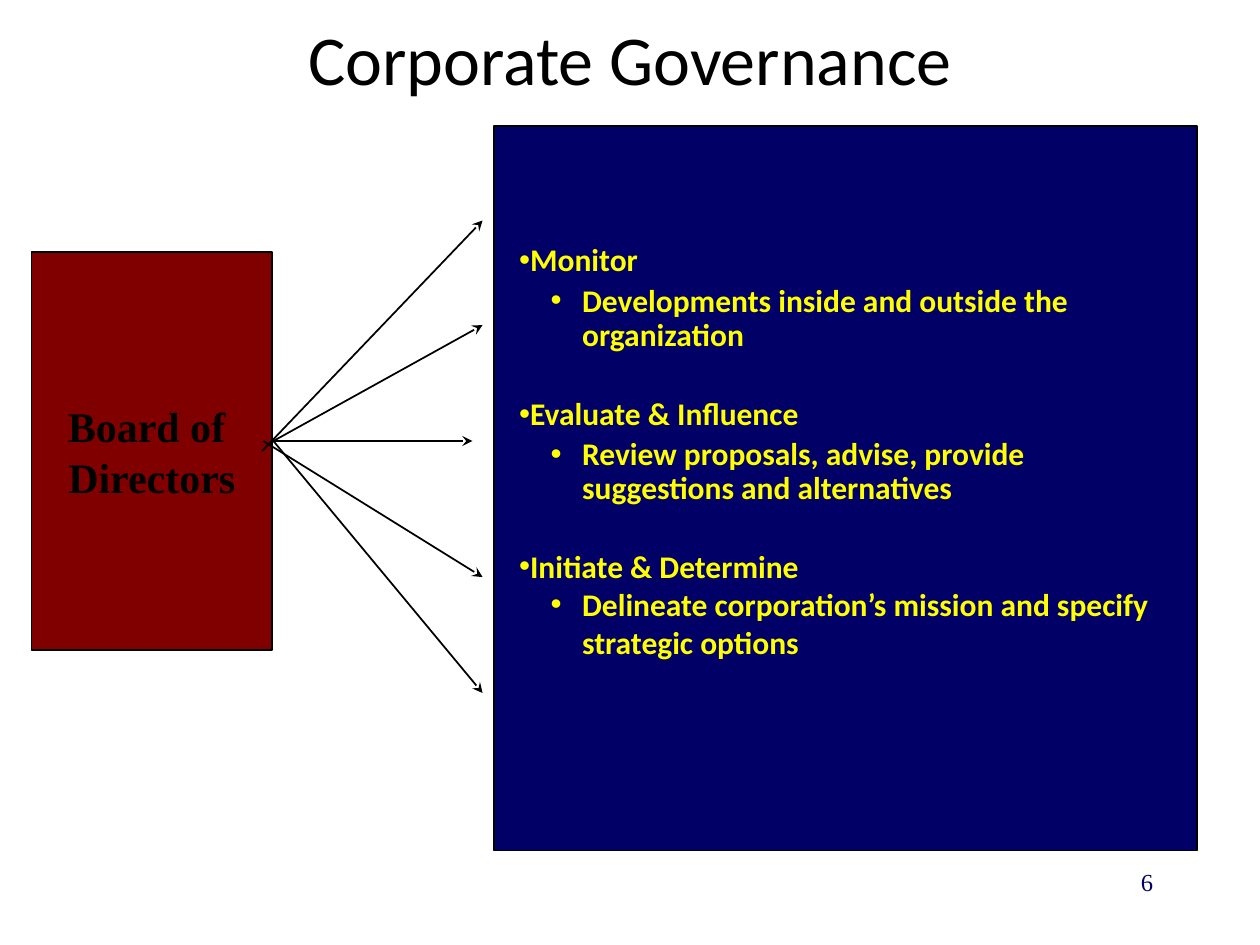
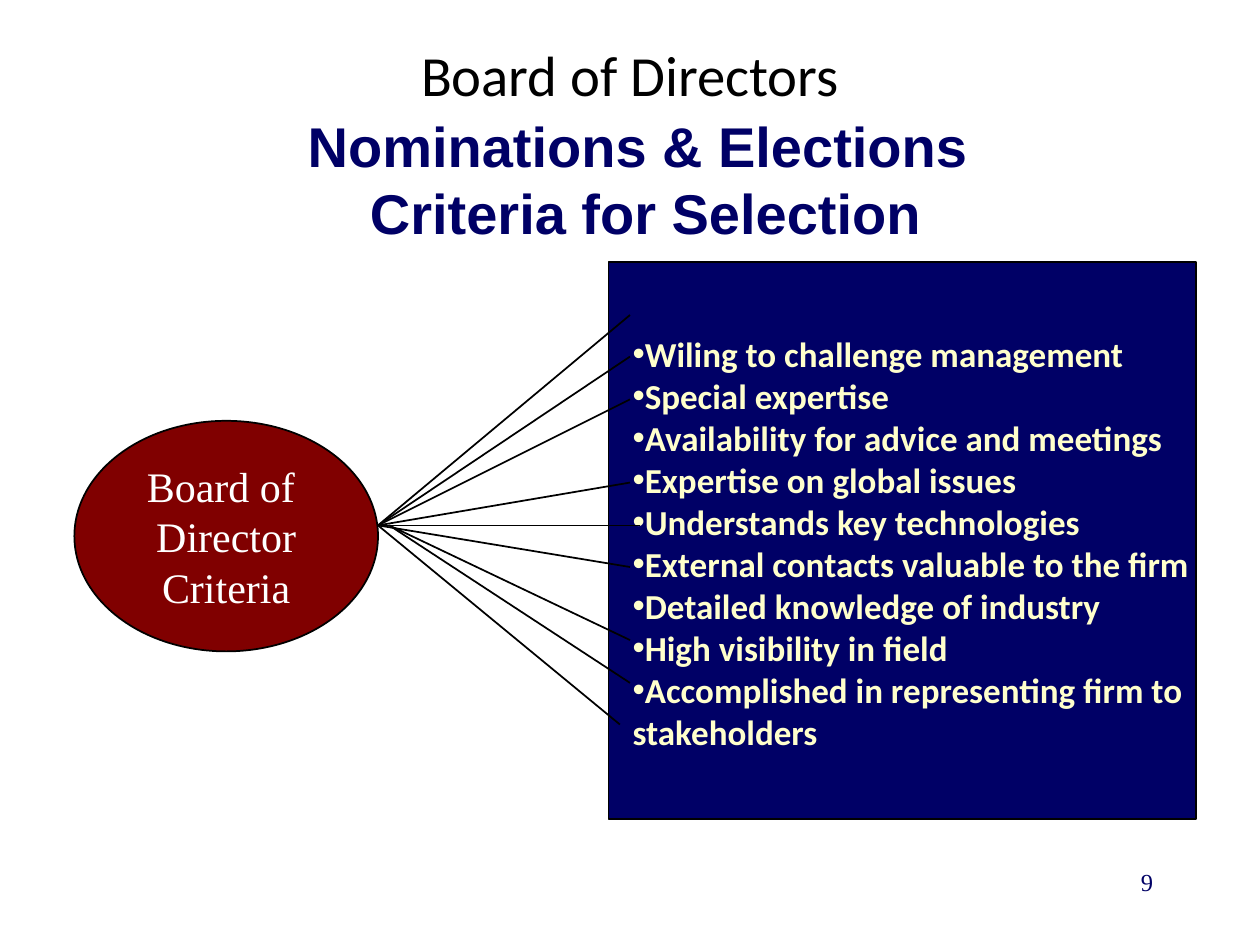
"""Build two slides on corporate governance and board selection."""
from lxml import etree
from pptx import Presentation
from pptx.dml.color import RGBColor
from pptx.enum import shapes, text
from pptx.oxml.ns import qn
from pptx.util import Inches, Pt

NAVY, MAROON, BLACK, WHITE = "000066", "800000", "000000", "FFFFFF"
YELLOW, CREAM = "FFFF00", "FFFFCC"
HEADING, LABEL, SUBHEADING = "Calibri", "Times New Roman", "Arial"
CENTER = text.PP_ALIGN.CENTER

DUTIES = [
    ("Monitor", "Developments inside and outside the organization"),
    ("Evaluate & Influence", "Review proposals, advise, provide suggestions and alternatives"),
    ("Initiate & Determine", "Delineate corporation’s mission and specify strategic options"),
]
CRITERIA = [
    "Wiling to challenge management",
    "Special expertise",
    "Availability for advice and meetings",
    "Expertise on global issues",
    "Understands key technologies",
    "External contacts valuable to the firm",
    "Detailed knowledge of industry",
    "High visibility in field",
    "Accomplished in representing firm to stakeholders",
]


def color(value):
    """Turn a hex string into a colour."""
    return RGBColor.from_string(value)


def style(para, name, size, hue, bold=False):
    """Set the font of a whole paragraph."""
    font = para.font
    font.name, font.size, font.bold = name, Pt(size), bold
    font.color.rgb = color(hue)


def place(shape, left, top, width, height):
    """Move and size a shape, in inches."""
    shape.left, shape.top = Inches(left), Inches(top)
    shape.width, shape.height = Inches(width), Inches(height)


def paint(shape, fill):
    """Fill a shape and give it the thin black outline."""
    shape.fill.solid()
    shape.fill.fore_color.rgb = color(fill)
    shape.line.color.rgb = color(BLACK)
    shape.line.width = Pt(1)


def write(frame, lines):
    """Put each line in its own paragraph and return the paragraphs."""
    frame.text = "\n".join(lines)
    return frame.paragraphs


def set_bullet(para, margin=0, indent=0, mark="•"):
    """Set the indents and the bullet; an empty mark means no bullet."""
    props = para._p.get_or_add_pPr()
    props.set("marL", str(Inches(margin)))
    props.set("indent", str(Inches(indent)))
    if mark:
        etree.SubElement(props, qn("a:buChar")).set("char", mark)
    else:
        etree.SubElement(props, qn("a:buNone"))


def add_title(page, words, size, top, height):
    """Fill the title placeholder."""
    title = page.shapes.title
    place(title, 0.75, top, 8.5, height)
    frame = title.text_frame
    frame.auto_size = text.MSO_AUTO_SIZE.NONE
    frame.vertical_anchor = text.MSO_ANCHOR.MIDDLE
    para = write(frame, [words])[0]
    para.alignment = CENTER
    style(para, HEADING, size, BLACK)


def add_page_number(page, number):
    """Add the number at the lower right."""
    box = page.shapes.add_textbox(Inches(7.17), Inches(6.83), Inches(2.08), Inches(0.5))
    box.text_frame.word_wrap = True
    para = write(box.text_frame, [number])[0]
    para.alignment = text.PP_ALIGN.RIGHT
    style(para, LABEL, 14, NAVY)


def add_subtitle(holder, lines):
    """Turn a body placeholder into a centred subtitle."""
    place(holder, 0.25, 0.94, 9.75, 1.08)
    holder.text_frame.auto_size = text.MSO_AUTO_SIZE.NONE
    for index, para in enumerate(write(holder.text_frame, lines)):
        set_bullet(para, mark="")
        para.alignment = CENTER
        para.line_spacing = 0.8
        para.space_before = Pt(7.5 if index else 0)
        style(para, SUBHEADING, 32, NAVY, bold=True)


def prepare_panel(holder, bounds, insets, lines):
    """Turn a body placeholder into a navy panel and return its paragraphs."""
    place(holder, *bounds)
    paint(holder, NAVY)
    frame = holder.text_frame
    frame.auto_size = text.MSO_AUTO_SIZE.NONE
    frame.vertical_anchor = text.MSO_ANCHOR.TOP
    frame.margin_left, frame.margin_top, frame.margin_right = map(Inches, insets)
    return write(frame, lines)


def add_duties(holder):
    """List the board's duties, each with its explanation."""
    lines = [line for duty in DUTIES for line in duty]
    paras = prepare_panel(holder, (3.92, 1, 5.58, 5.75), (0.2, 0.94, 0.2), lines)
    last = len(DUTIES) - 1
    for index, para in enumerate(paras):
        section, level = divmod(index, 2)
        para.level = level
        set_bullet(para, 0.5 * level, -0.25 * level)
        para.line_spacing = 1 if section == last else 0.9
        if level:
            para.space_before = Pt(0 if section == last else 3.6)
        else:
            para.space_before = Pt((0, 26, 23)[section])
        style(para, HEADING, 18, YELLOW, bold=True)


def add_criteria(holder):
    """List the selection criteria."""
    paras = prepare_panel(holder, (4.83, 2.08, 4.66, 4.42), (0.19, 0.56, 0.03), CRITERIA)
    for para in paras:
        set_bullet(para)
        para.space_before = Pt(0)
        style(para, HEADING, 20, CREAM, bold=True)


def add_source(page, kind, bounds, lines, hue, bold=False):
    """Add the maroon shape that the lines fan out from."""
    shape = page.shapes.add_shape(kind, *map(Inches, bounds))
    shape.shadow.inherit = False
    paint(shape, MAROON)
    frame = shape.text_frame
    frame.word_wrap = False
    frame.vertical_anchor = text.MSO_ANCHOR.MIDDLE
    for para in write(frame, lines):
        para.alignment = CENTER
        style(para, LABEL, 24, hue, bold)


def add_fan(page, rays, arrows=False):
    """Draw a line for each pair of start and end points."""
    for start, end in rays:
        ray = page.shapes.add_connector(shapes.MSO_CONNECTOR.STRAIGHT,
                                        *map(Inches, start + end))
        ray.line.color.rgb = color(BLACK)
        ray.line.width = Pt(1)
        if arrows:
            tip = etree.SubElement(ray.line._get_or_add_ln(), qn("a:tailEnd"))
            tip.set("type", "stealth")
        etree.SubElement(ray._element.spPr, qn("a:effectLst"))


def build_governance(deck):
    """Build the slide on what the board does."""
    page = deck.slides.add_slide(deck.slide_layouts[1])
    add_title(page, "Corporate Governance", 40, 0, 0.92)
    add_duties(page.placeholders[1])
    add_source(page, shapes.MSO_SHAPE.RECTANGLE, (0.25, 2, 1.91, 3.16),
               ["Board of ", "Directors"], BLACK, bold=True)
    hub = (2.17, 3.5)
    add_fan(page, [
        ((2.08, 3.58), (3.83, 1.75)),
        (hub, (3.83, 2.58)),
        (hub, (3.75, 3.5)),
        ((2.09, 3.5), (3.83, 4.58)),
        (hub, (3.83, 5.5)),
    ], arrows=True)
    add_page_number(page, "6")


def build_selection(deck):
    """Build the slide on how directors are chosen."""
    page = deck.slides.add_slide(deck.slide_layouts[3])
    add_title(page, "Board of Directors", 32.4, 0.25, 0.67)
    add_subtitle(page.placeholders[1], ["Nominations & Elections ", "Criteria for Selection"])
    add_criteria(page.placeholders[2])
    add_source(page, shapes.MSO_SHAPE.OVAL, (0.59, 3.34, 2.41, 1.83),
               ["Board of ", "Director", "Criteria"], WHITE)
    hub, lower_hub = (3, 4.17), (3.09, 4.17)
    tips = [(5, 2.5), (5, 2.83), (5, 3.17), (5, 3.83), (5.08, 4.17), (5, 4.5), (4.92, 5.75)]
    lower_tips = [(5, 5.08), (5, 5.42)]
    add_fan(page, [(hub, tip) for tip in tips] + [(lower_hub, tip) for tip in lower_tips])
    add_page_number(page, "9")


def main():
    """Build and save the deck."""
    deck = Presentation()
    deck.slide_width, deck.slide_height = Inches(10), Inches(7.5)
    build_governance(deck)
    build_selection(deck)
    deck.save("out.pptx")


if __name__ == "__main__":
    main()
